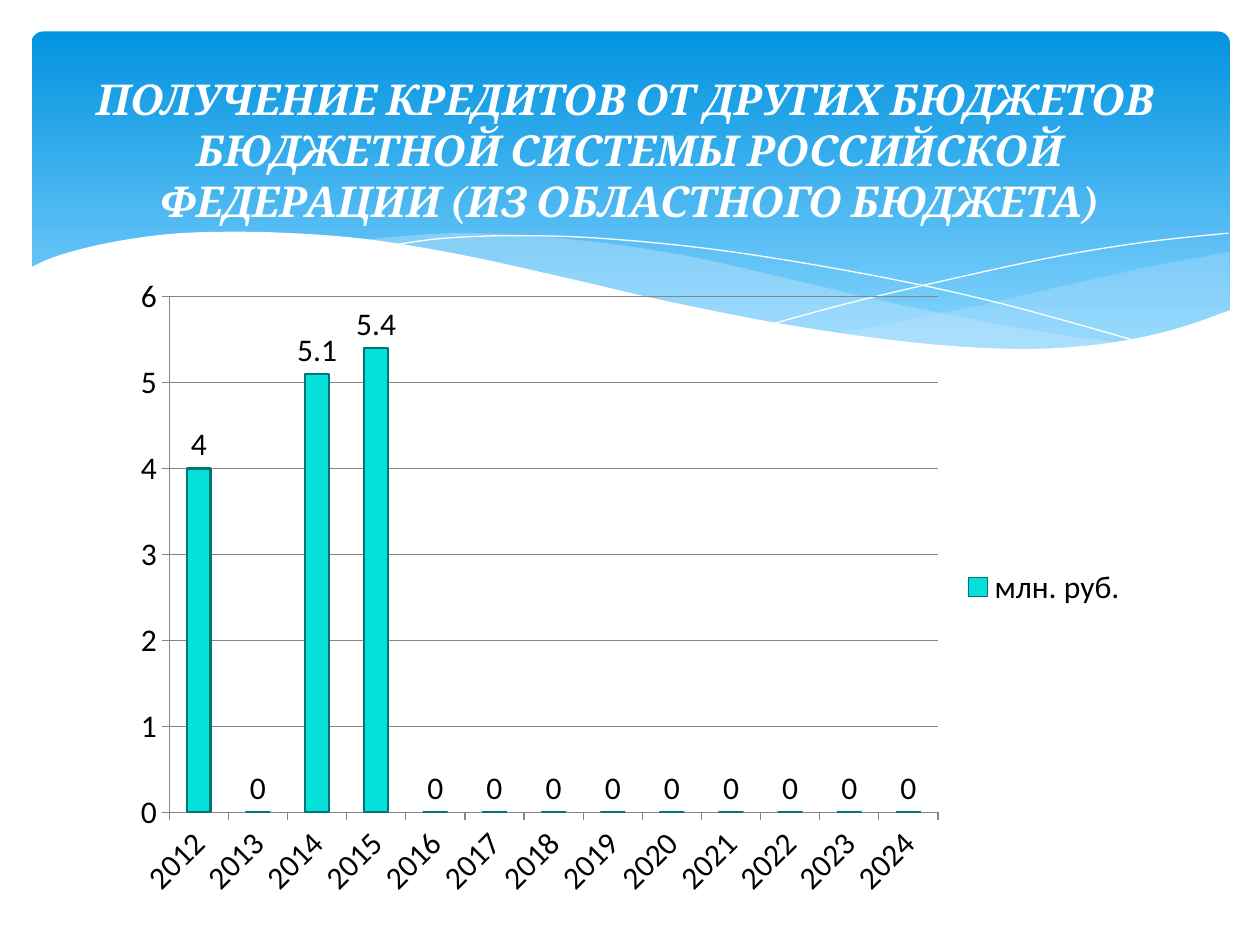
from dataclasses import dataclass

from lxml import etree
from pptx import Presentation
from pptx.chart.data import CategoryChartData
from pptx.dml.color import RGBColor
from pptx.enum.chart import XL_CHART_TYPE, XL_LABEL_POSITION, XL_LEGEND_POSITION, XL_TICK_MARK
from pptx.enum.shapes import MSO_SHAPE
from pptx.enum.text import MSO_ANCHOR, PP_ALIGN
from pptx.oxml.ns import qn
from pptx.util import Inches, Pt


@dataclass(frozen=True)
class Theme:
    white: str = "FFFFFF"
    black: str = "000000"
    sky_top: str = "0293E0"
    sky_bottom: str = "83D3FE"
    wave: str = "C6E7FC"
    bar: str = "05E0DB"
    bar_edge: str = "037572"
    axis: str = "868686"
    title_font: str = "Cambria"
    chart_font: str = "Calibri"
    title_size: float = 24.3
    chart_size: float = 18


THEME = Theme()
TITLE = ("ПОЛУЧЕНИЕ КРЕДИТОВ ОТ ДРУГИХ БЮДЖЕТОВ \v"
         "БЮДЖЕТНОЙ СИСТЕМЫ РОССИЙСКОЙ ФЕДЕРАЦИИ (ИЗ ОБЛАСТНОГО БЮДЖЕТА)")
CREDITS = {2012: 4, 2014: 5.1, 2015: 5.4}
YEARS = range(2012, 2025)

# Anchor points of the wave edges, in inches
RIGHT_TOP = [(9.76, 2), (9.21, 2.1), (8.61, 2.23), (7.79, 2.42), (7.06, 2.57), (6.61, 2.65)]
RIGHT_BOTTOM = [(6.61, 2.65), (7.19, 2.72), (7.69, 2.77), (8.14, 2.78), (8.63, 2.75),
                (9.13, 2.67), (9.49, 2.57), (9.76, 2.47)]
MIDDLE_TOP = [(8.93, 2.73), (8.07, 2.6), (7.06, 2.4), (6.29, 2.22), (5.55, 2.05),
              (4.89, 1.94), (4.2, 1.87), (3.61, 1.85), (3.13, 1.88), (2.86, 1.91)]
MIDDLE_BOTTOM = [(2.86, 1.91), (3.62, 2.03), (4.49, 2.22), (5.3, 2.4), (6.01, 2.55),
                 (6.8, 2.68), (7.48, 2.76), (8.07, 2.78), (8.57, 2.77), (8.93, 2.73)]
FALLING_LINE = [(3.09, 1.95), (3.53, 1.89), (4.16, 1.87), (4.89, 1.9), (5.82, 2),
                (6.95, 2.19), (7.95, 2.41), (9.07, 2.72)]
RISING_LINE = [(6.13, 2.57), (6.72, 2.41), (7.48, 2.23), (8.36, 2.04), (9.1, 1.92), (9.75, 1.85)]
FRONT_TOP = [(9.77, 2.46), (9.3, 2.62), (8.75, 2.73), (8.09, 2.77), (7.26, 2.72),
             (6.26, 2.58), (5.29, 2.39), (4.47, 2.2), (3.65, 2.02), (2.92, 1.9),
             (2.3, 1.85), (1.77, 1.84), (1.32, 1.86), (0.85, 1.93), (0.46, 2.03), (0.23, 2.13)]


def color(code):
    return RGBColor.from_string(code)


def smooth_curve(anchors, steps=5):
    """Return points of a Catmull-Rom curve running through the anchors."""
    padded = [anchors[0], *anchors, anchors[-1]]
    points = [anchors[0]]
    for before, start, end, after in zip(padded, padded[1:], padded[2:], padded[3:]):
        for step in range(1, steps + 1):
            t = step / steps
            points.append(tuple(
                b + ((c - a) * t + (2 * a - 5 * b + 4 * c - d) * t ** 2
                     + (3 * b - a - 3 * c + d) * t ** 3) / 2
                for a, b, c, d in zip(before, start, end, after)))
    return points


def add_wave(page, points, fill=None, opacity=100, line=None):
    """Draw a closed wave when fill is given, otherwise an open hairline."""
    (x, y), *rest = points
    builder = page.shapes.build_freeform(Inches(x), Inches(y))
    builder.add_line_segments([(Inches(x), Inches(y)) for x, y in rest], close=fill is not None)
    wave = builder.convert_to_shape()
    wave.shadow.inherit = False
    if fill:
        wave.fill.solid()
        wave.fill.fore_color.rgb = color(fill)
        tint = next(wave.element.iter(qn("a:srgbClr")))
        if opacity < 100:
            etree.SubElement(tint, qn("a:alpha")).set("val", str(opacity * 1000))
    else:
        wave.fill.background()
    if line:
        wave.line.color.rgb = color(line)
        wave.line.width = Pt(0)
    else:
        wave.line.fill.background()


def add_banner(page):
    banner = page.shapes.add_shape(MSO_SHAPE.ROUNDED_RECTANGLE, Inches(0.25), Inches(0.25),
                                   Inches(9.51), Inches(2.7))
    banner.adjustments[0] = 0.034
    banner.shadow.inherit = False
    banner.line.fill.background()
    banner.fill.gradient()
    banner.fill.gradient_angle = 270
    stops = zip(banner.fill.gradient_stops, (0, 0.9), (THEME.sky_top, THEME.sky_bottom))
    for stop, position, code in stops:
        stop.position = position
        stop.color.rgb = color(code)


def style_axis(axis):
    axis.major_tick_mark = XL_TICK_MARK.OUTSIDE
    axis.minor_tick_mark = XL_TICK_MARK.NONE
    axis.format.line.color.rgb = color(THEME.axis)
    axis.format.line.width = Pt(0.75)


def add_credit_chart(page):
    data = CategoryChartData()
    data.categories = [str(year) for year in YEARS]
    data.add_series("млн. руб.", [CREDITS.get(year, 0) for year in YEARS])
    chart = page.shapes.add_chart(XL_CHART_TYPE.COLUMN_CLUSTERED, Inches(0.95), Inches(2.1),
                                  Inches(8.1), Inches(5.12), data).chart
    chart.has_title = False
    chart.font.name = THEME.chart_font
    chart.font.size = Pt(THEME.chart_size)
    chart.font.color.rgb = color(THEME.black)
    chart.has_legend = True
    chart.legend.position = XL_LEGEND_POSITION.RIGHT
    chart.legend.include_in_layout = False

    style_axis(chart.category_axis)
    values = chart.value_axis
    style_axis(values)
    values.minimum_scale, values.maximum_scale, values.major_unit = 0, 6, 1
    values.has_major_gridlines = True
    values.major_gridlines.format.line.color.rgb = color(THEME.axis)
    values.major_gridlines.format.line.width = Pt(0.75)

    plot = chart.plots[0]
    plot.gap_width = 150
    plot.vary_by_categories = False
    plot.has_data_labels = True
    plot.data_labels.show_value = True
    plot.data_labels.position = XL_LABEL_POSITION.OUTSIDE_END
    bars = plot.series[0].format
    bars.fill.solid()
    bars.fill.fore_color.rgb = color(THEME.bar)
    bars.line.color.rgb = color(THEME.bar_edge)
    bars.line.width = Pt(1.25)


def set_title(page, text, size, font, code):
    title = page.shapes.title
    title.left, title.top, title.width, title.height = map(Inches, (0.5, 0.37, 9, 2.28))
    frame = title.text_frame
    frame.text = text
    frame.word_wrap = True
    frame.vertical_anchor = MSO_ANCHOR.MIDDLE
    frame.margin_bottom = Inches(0.69)
    para = frame.paragraphs[0]
    para.alignment = PP_ALIGN.CENTER
    for span in para.runs:
        span.font.name = font
        span.font.size = Pt(size)
        span.font.bold = span.font.italic = True
        span.font.color.rgb = color(code)
    title.element.getparent().append(title.element)  # bring to the front


def main():
    deck = Presentation()
    deck.slide_width, deck.slide_height = Inches(10), Inches(7.5)
    page = deck.slides.add_slide(deck.slide_layouts[5])
    add_banner(page)
    add_wave(page, smooth_curve(RIGHT_TOP) + smooth_curve(RIGHT_BOTTOM),
             fill=THEME.wave, opacity=29)
    add_wave(page, smooth_curve(MIDDLE_TOP) + smooth_curve(MIDDLE_BOTTOM),
             fill=THEME.wave, opacity=40)
    for anchors in (FALLING_LINE, RISING_LINE):
        add_wave(page, smooth_curve(anchors), line=THEME.white)
    add_wave(page, smooth_curve(FRONT_TOP) + [(0.23, 3.29), (9.77, 3.29)], fill=THEME.white)
    add_credit_chart(page)
    set_title(page, TITLE, size=THEME.title_size, font=THEME.title_font, code=THEME.white)
    deck.save("out.pptx")


if __name__ == "__main__":
    main()
